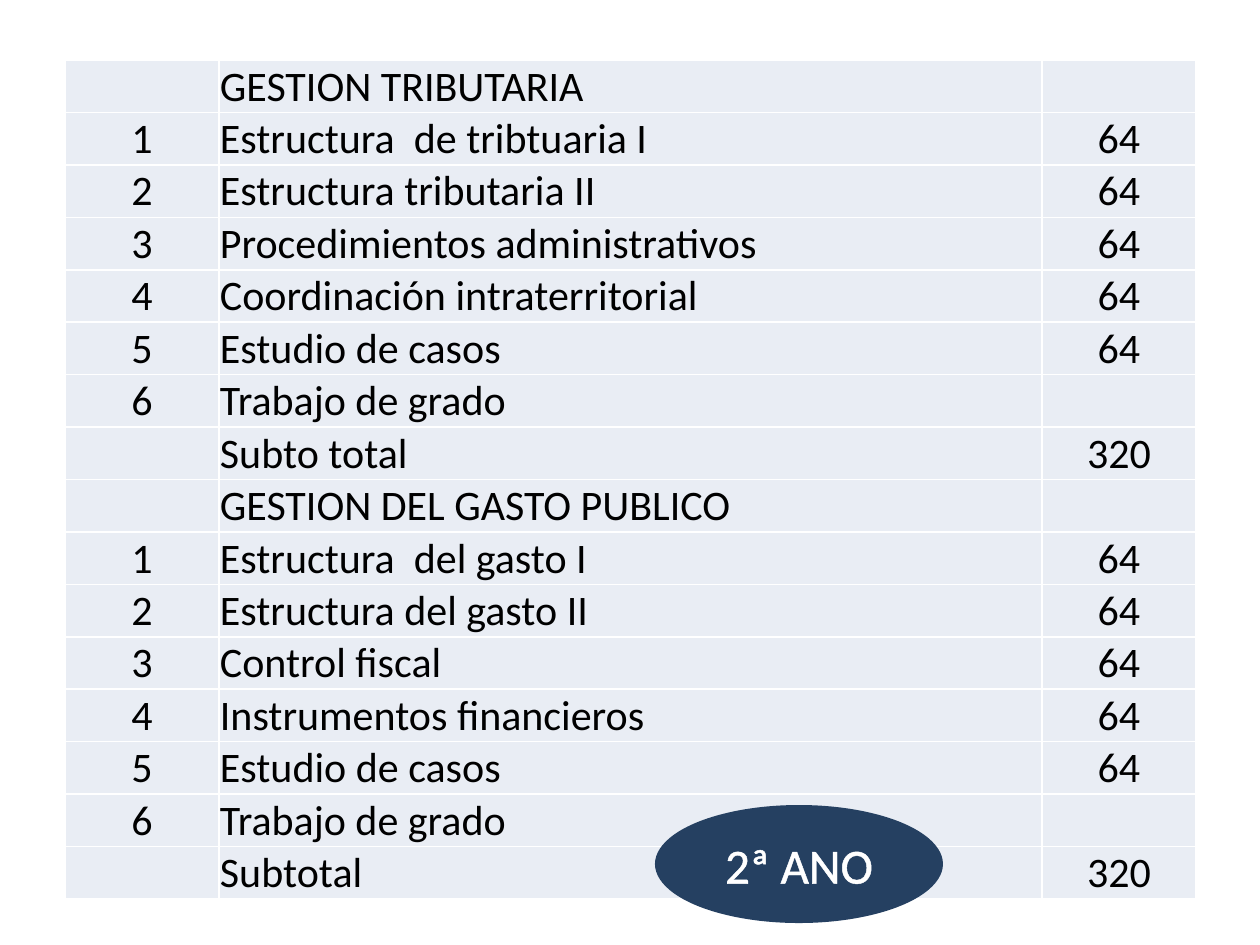
from dataclasses import dataclass

from lxml import etree
from pptx import Presentation
from pptx.dml.color import RGBColor
from pptx.enum.shapes import MSO_SHAPE
from pptx.enum.text import MSO_ANCHOR, PP_ALIGN
from pptx.oxml.ns import qn
from pptx.util import Pt

ELLIPSE = MSO_SHAPE.OVAL
BOTTOM, MIDDLE = MSO_ANCHOR.BOTTOM, MSO_ANCHOR.MIDDLE
LEFT, CENTER = PP_ALIGN.LEFT, PP_ALIGN.CENTER
EMU_PER_PX = 914400 / 126


@dataclass(frozen=True)
class Theme:
    font: str = "Calibri"
    cell_fill: str = "E9EDF4"
    cell_text: str = "000000"
    border: str = "FFFFFF"
    badge_fill: str = "254061"
    badge_text: str = "FFFFFF"
    cell_size: int = 24
    badge_size: int = 28
    border_width: float = 1
    outline_width: float = 1.45


THEME = Theme()
TABLE_BOX = (65, 60, 1131, 839)
COLUMN_WIDTHS = (154, 823, 154)
COLUMN_ALIGNMENTS = (CENTER, LEFT, CENTER)
BADGE_BOX = (655, 805, 288, 118)
CELL_FORMAT = {
    "vertical_anchor": BOTTOM,
    "margin_left": 1,
    "margin_right": 1,
    "margin_top": 1,
    "margin_bottom": 0,
}
HOURS = "64"
TOTAL_HOURS = "320"
LAST_COURSE = "Trabajo de grado"
PROGRAMS = (
    ("GESTION TRIBUTARIA",
     ("Estructura  de tribtuaria I", "Estructura tributaria II",
      "Procedimientos administrativos", "Coordinación intraterritorial",
      "Estudio de casos"),
     "Subto total"),
    ("GESTION DEL GASTO PUBLICO",
     ("Estructura  del gasto I", "Estructura del gasto II",
      "Control fiscal", "Instrumentos financieros", "Estudio de casos"),
     "Subtotal"),
)


def px(length):
    return round(length * EMU_PER_PX)


def program_rows(title, courses, total_label):
    return [
        ("", title, ""),
        *((str(number), course, HOURS) for number, course in enumerate(courses, 1)),
        (str(len(courses) + 1), LAST_COURSE, ""),
        ("", total_label, TOTAL_HOURS),
    ]


def add_line(parent, tag, color, width):
    line = etree.Element(qn(tag), w=str(Pt(width)))
    fill = etree.SubElement(line, qn("a:solidFill"))
    etree.SubElement(fill, qn("a:srgbClr"), val=color)
    parent.append(line)


def write_text(frame, text, alignment, size, color):
    para = frame.paragraphs[0]
    para.alignment = alignment
    span = para.add_run()
    span.text = text
    for name, value in {"name": THEME.font, "size": Pt(size)}.items():
        setattr(span.font, name, value)
    span.font.color.rgb = RGBColor.from_string(color)
    return span


def format_cell(cell, text, alignment):
    for name, value in CELL_FORMAT.items():
        setattr(cell, name, px(value) if name.startswith("margin") else value)
    properties = cell._tc.get_or_add_tcPr()
    for tag in ("a:lnL", "a:lnR", "a:lnT", "a:lnB"):
        add_line(properties, tag, THEME.border, THEME.border_width)
    cell.fill.solid()
    cell.fill.fore_color.rgb = RGBColor.from_string(THEME.cell_fill)
    if text:
        write_text(cell.text_frame, text, alignment, THEME.cell_size, THEME.cell_text)


def add_course_table(page, rows):
    box = page.shapes.add_table(len(rows), len(COLUMN_WIDTHS), *map(px, TABLE_BOX))
    table = box.table
    table.first_row = False
    table.horz_banding = False
    for column, width in zip(table.columns, COLUMN_WIDTHS):
        column.width = px(width)
    for row, texts in zip(table.rows, rows):
        for cell, text, alignment in zip(row.cells, texts, COLUMN_ALIGNMENTS):
            format_cell(cell, text, alignment)


def add_year_badge(page, text):
    badge = page.shapes.add_shape(ELLIPSE, *map(px, BADGE_BOX))
    badge.shadow.inherit = False
    badge.fill.solid()
    badge.fill.fore_color.rgb = RGBColor.from_string(THEME.badge_fill)
    badge.line.fill.background()
    frame = badge.text_frame
    frame.word_wrap = True
    frame.vertical_anchor = MIDDLE
    span = write_text(frame, text, CENTER, THEME.badge_size, THEME.badge_text)
    properties = span.font._element
    add_line(properties, "a:ln", THEME.badge_text, THEME.outline_width)
    properties.insert(0, properties[-1])


def main():
    deck = Presentation()
    deck.slide_width, deck.slide_height = px(1260), px(945)
    page = deck.slides.add_slide(deck.slide_layouts[6])
    rows = [row for program in PROGRAMS for row in program_rows(*program)]
    add_course_table(page, rows)
    add_year_badge(page, "2ª ANO")
    deck.save("out.pptx")


if __name__ == "__main__":
    main()
